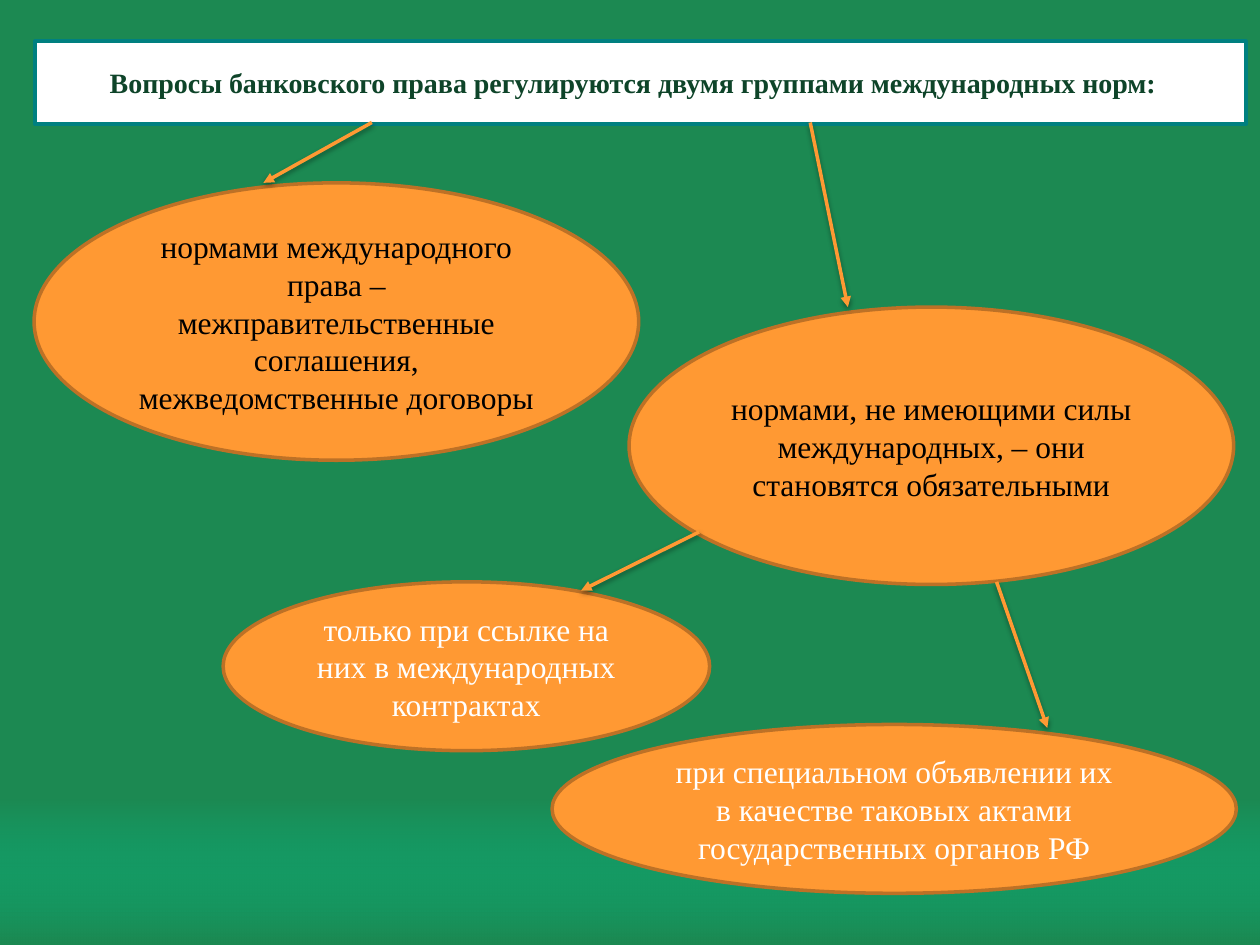
from dataclasses import dataclass

from lxml.etree import SubElement
from pptx import Presentation
from pptx.dml.color import RGBColor
from pptx.enum.shapes import MSO_CONNECTOR, MSO_SHAPE
from pptx.enum.text import MSO_ANCHOR, PP_ALIGN
from pptx.oxml import parse_xml
from pptx.oxml.ns import nsdecls, qn
from pptx.util import Pt


@dataclass(frozen=True)
class Theme:
    background: str = "1C8952"
    glow: str = "00CC99"
    panel: str = "FFFFFF"
    panel_edge: str = "008080"
    heading: str = "0E4429"
    bubble: str = "FF9933"
    bubble_edge: str = "BD7126"
    dark_text: str = "000000"
    light_text: str = "FFFFFF"
    font: str = "Times New Roman"
    heading_size: float = 16
    text_size: float = 18
    line_width: float = 2


THEME = Theme()
WIDTH, HEIGHT = 720, 540

HEADING = "Вопросы банковского права регулируются двумя группами международных норм:"

# Box (left, top, width, height), wording, text colour
BUBBLES = [
    ((19.5, 104.5, 345.5, 158.5),
     "нормами международного права – межправительственные соглашения, "
     "межведомственные договоры", THEME.dark_text),
    ((359.5, 175.5, 345.5, 158.5),
     "нормами, не имеющими силы международных, – они становятся обязательными",
     THEME.dark_text),
    ((127.5, 332.5, 278, 96.5),
     "только при ссылке на них в международных контрактах", THEME.light_text),
    ((315.5, 414, 391, 96.5),
     "при специальном объявлении их в качестве таковых актами "
     "государственных органов РФ", THEME.light_text),
]

# Start and end points
ARROWS = [
    ((569.5, 332.5), (598.5, 416)),
    ((399.5, 304), (332, 337.5)),
    ((212.5, 70), (150.5, 104.5)),
    ((463, 70), (484.5, 175.5)),
]


def apply(target, formats):
    for attribute, value in formats.items():
        setattr(target, attribute, value)


def points(values):
    return [Pt(value) for value in values]


def paint(shape, fill, edge):
    shape.fill.solid()
    shape.fill.fore_color.rgb = RGBColor.from_string(fill)
    shape.line.color.rgb = RGBColor.from_string(edge)
    shape.line.width = Pt(THEME.line_width)


def write(shape, text, size, color, align, bold=False):
    frame = shape.text_frame
    apply(frame, {"text": text, "word_wrap": True,
                  "vertical_anchor": MSO_ANCHOR.MIDDLE})
    paragraph = frame.paragraphs[0]
    paragraph.alignment = align
    font = paragraph.runs[0].font
    apply(font, {"name": THEME.font, "size": Pt(size), "bold": bold})
    font.color.rgb = RGBColor.from_string(color)
    return paragraph


def add_glow_band(slide, box):
    band = slide.shapes.add_shape(MSO_SHAPE.RECTANGLE, *points(box))
    band.shadow.inherit = False
    band.line.fill.background()
    band.fill.gradient()
    band.fill.gradient_angle = 270
    stops = band.fill.gradient_stops
    for stop, color, position in zip(stops, (THEME.glow, THEME.background), (0, 1)):
        stop.color.rgb = RGBColor.from_string(color)
        stop.position = position
    # The glow starts fully transparent
    glow = next(band._element.spPr.iter(qn("a:srgbClr")))
    SubElement(glow, qn("a:alpha"), val="0")


def add_heading(slide, box):
    heading = slide.shapes.title
    apply(heading, dict(zip(("left", "top", "width", "height"), points(box))))
    heading._element.spPr.append(parse_xml(
        f'<a:prstGeom {nsdecls("a")} prst="roundRect"><a:avLst/></a:prstGeom>'))
    paint(heading, THEME.panel, THEME.panel_edge)
    paragraph = write(heading, HEADING, THEME.heading_size, THEME.heading,
                      PP_ALIGN.JUSTIFY, bold=True)
    paragraph._p.get_or_add_pPr().set("indent", str(Pt(35.5)))


def add_bubble(slide, box, text, color):
    bubble = slide.shapes.add_shape(MSO_SHAPE.OVAL, *points(box))
    bubble.shadow.inherit = False
    paint(bubble, THEME.bubble, THEME.bubble_edge)
    write(bubble, text, THEME.text_size, color, PP_ALIGN.CENTER)


def add_arrow(slide, start, end):
    arrow = slide.shapes.add_connector(MSO_CONNECTOR.STRAIGHT, *points(start + end))
    arrow.line.color.rgb = RGBColor.from_string(THEME.bubble)
    arrow.line.width = Pt(THEME.line_width)
    SubElement(arrow.line._get_or_add_ln(), qn("a:tailEnd"), type="triangle")
    # Soft shadow straight below
    arrow._element.spPr.append(parse_xml(
        f'<a:effectLst {nsdecls("a")}>'
        f'<a:outerShdw blurRad="{Pt(3.1)}" dist="{Pt(1.6)}" dir="5400000" rotWithShape="0">'
        '<a:srgbClr val="000000"><a:alpha val="38000"/></a:srgbClr>'
        '</a:outerShdw></a:effectLst>'))


def build_slide(presentation):
    slide = presentation.slides.add_slide(presentation.slide_layouts[5])
    background = slide.background.fill
    background.solid()
    background.fore_color.rgb = RGBColor.from_string(THEME.background)

    add_glow_band(slide, (0, 457, WIDTH, HEIGHT - 457))
    add_heading(slide, (20, 23.5, 692, 47.5))
    for bubble in BUBBLES:
        add_bubble(slide, *bubble)
    for arrow in ARROWS:
        add_arrow(slide, *arrow)


def main():
    presentation = Presentation()
    apply(presentation, {"slide_width": Pt(WIDTH), "slide_height": Pt(HEIGHT)})
    build_slide(presentation)
    presentation.save("out.pptx")


if __name__ == "__main__":
    main()
